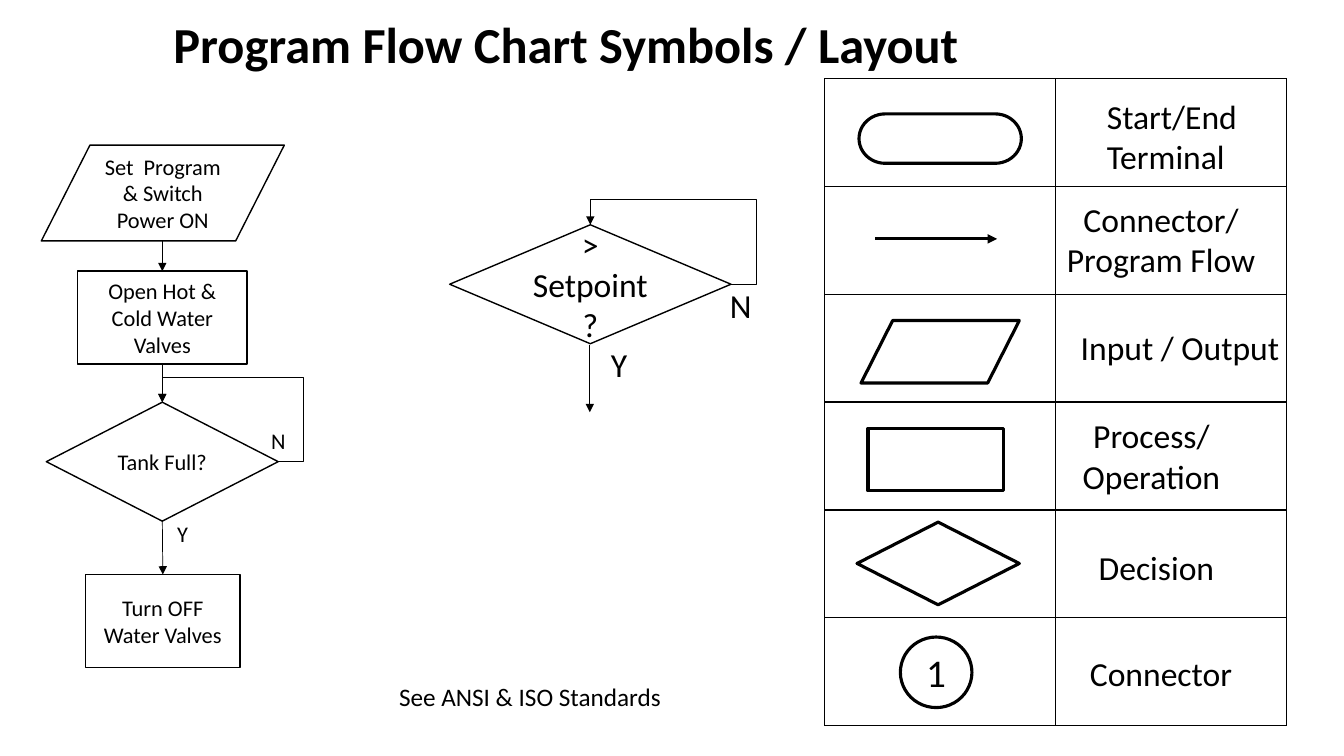
import pptx
import pptx.dml.color
import pptx.enum.shapes
import pptx.enum.text
import pptx.oxml
import pptx.oxml.ns
import pptx.util

PX = 9144
INK = "000000"
KIND = pptx.enum.shapes.MSO_SHAPE
LINK = pptx.enum.shapes.MSO_CONNECTOR
ALIGN = pptx.enum.text.PP_ALIGN
ANCHOR = pptx.enum.text.MSO_ANCHOR
FIT = pptx.enum.text.MSO_AUTO_SIZE
BOTTOM, TOP, RIGHT = 2, 0, 3
ROW, COL, REACH = 107, 229, 25


def emu(*nums):
    return [pptx.util.Emu(round(n * PX)) for n in nums]


def tint(code):
    return pptx.dml.color.RGBColor.from_string(code)


def put(item, **vals):
    for name, val in vals.items():
        setattr(item, name, val)


def add_xml(host, tag, inner="", **attrs):
    pairs = "".join(f' {name}="{val}"' for name, val in attrs.items())
    space = pptx.oxml.ns.nsdecls("a")
    node = pptx.oxml.parse_xml(f"<a:{tag} {space}{pairs}>{inner}</a:{tag}>")
    host.append(node)


def write(frame, text, size, align, bold=False):
    frame.text = text
    for para in frame.paragraphs:
        para.alignment = align
        put(para.font, name="Calibri", size=pptx.util.Pt(size), bold=bold)
        para.font.color.rgb = tint(INK)


def draw_line(item, width):
    item.line.color.rgb = tint(INK)
    item.line.width = pptx.util.Pt(width)


def add_title(slide, text, box):
    title = slide.shapes.title
    put(title, **dict(zip(("left", "top", "width", "height"), emu(*box))))
    title.text_frame.vertical_anchor = ANCHOR.MIDDLE
    write(title.text_frame, text, 36, ALIGN.LEFT, True)
    title.text_frame.paragraphs[0].line_spacing = 0.9


def add_node(slide, kind, box, text="", size=16, width=1, fill="FFFFFF"):
    node = slide.shapes.add_shape(kind, *emu(*box))
    node.shadow.inherit = False
    if fill:
        node.fill.solid()
        node.fill.fore_color.rgb = tint(fill)
    else:
        node.fill.background()
    draw_line(node, width)
    if text:
        node.text_frame.vertical_anchor = ANCHOR.MIDDLE
        write(node.text_frame, text, size, ALIGN.CENTER)
    return node


def add_label(slide, text, box, size=24, align=ALIGN.LEFT, wrap=False):
    frame = slide.shapes.add_textbox(*emu(*box)).text_frame
    put(frame, word_wrap=wrap, auto_size=FIT.SHAPE_TO_FIT_TEXT)
    write(frame, text, size, align)


def finish(link, width):
    draw_line(link, width)
    add_xml(link.line._get_or_add_ln(), "tailEnd", type="triangle")
    add_xml(link._element.spPr, "effectLst")


def add_arrow(slide, start, end, width=0.5):
    link = slide.shapes.add_connector(LINK.STRAIGHT, *emu(*start, *end))
    finish(link, width)


def join(slide, first, last):
    link = slide.shapes.add_connector(LINK.STRAIGHT, 0, 0, 0, 0)
    link.begin_connect(first, BOTTOM)
    link.end_connect(last, TOP)
    finish(link, 0.5)


def add_loop(slide, gate):
    right, top = gate.left + gate.width, gate.top
    mid_x, mid_y = gate.left + gate.width // 2, top + gate.height // 2
    link = slide.shapes.add_connector(LINK.ELBOW, right, mid_y, mid_x, top)
    link.begin_connect(gate, RIGHT)
    link.end_connect(gate, TOP)
    geom = link._element.spPr.find(pptx.oxml.ns.qn("a:prstGeom"))
    geom.set("prst", "bentConnector4")
    guides = geom.find(pptx.oxml.ns.qn("a:avLst"))
    out = REACH * PX
    bends = {"adj1": -out / link.width, "adj2": 1 + out / link.height}
    for name, bend in bends.items():
        add_xml(guides, "gd", name=name, fmla=f"val {round(bend * 100000)}")
    finish(link, 0.5)


def add_grid(slide, left, top, rows, cols):
    box = emu(left, top, cols * COL, rows * ROW)
    table = slide.shapes.add_table(rows, cols, *box).table
    put(table, first_row=False, horz_banding=False)
    ink = f'<a:solidFill><a:srgbClr val="{INK}"/></a:solidFill>'
    for cell in table.iter_cells():
        edges = cell._tc.get_or_add_tcPr()
        for side in "LRTB":
            add_xml(edges, f"ln{side}", ink, w=12700)
        cell.fill.background()


def add_legend(slide):
    add_grid(slide, 818, 78, 6, 2)
    for kind, box, text in (
        (KIND.FLOWCHART_TERMINATOR, (852, 113, 161, 49), ""),
        (KIND.FLOWCHART_DATA, (854, 318, 157, 62), ""),
        (KIND.FLOWCHART_PROCESS, (861, 425, 134, 62), ""),
        (KIND.FLOWCHART_DECISION, (850, 518, 161, 82), ""),
        (KIND.FLOWCHART_CONNECTOR, (893, 632, 71, 70), "1"),
    ):
        add_node(slide, kind, box, text, 28, 2.25, None)
    add_arrow(slide, (868, 237), (989, 237), 2.25)
    for text, box, align in (
        ("Start/End\nTerminal", (1088, 90, 150, 91), ALIGN.LEFT),
        ("Connector/\nProgram Flow", (1047, 192, 209, 91), ALIGN.CENTER),
        ("Input / Output", (1062, 319, 219, 50), ALIGN.LEFT),
        ("Process/\nOperation", (1063, 407, 158, 91), ALIGN.CENTER),
        ("Decision", (1079, 538, 136, 50), ALIGN.CENTER),
        ("Connector", (1070, 643, 163, 50), ALIGN.CENTER),
    ):
        add_label(slide, text, box, align=align)


def add_sample(slide):
    gate = add_node(slide, KIND.FLOWCHART_DECISION, (446, 223, 279, 118),
                    "> Setpoint ?", 24)
    add_loop(slide, gate)
    add_label(slide, "Y", (596, 336, 37, 50))
    add_label(slide, "N", (714, 278, 42, 50))
    add_arrow(slide, (585, 342), (585, 409))


def add_flow(slide):
    add_node(slide, KIND.FLOWCHART_DATA, (41, 144, 241, 95),
             "Set  Program & Switch Power ON")
    valves = add_node(slide, KIND.FLOWCHART_PROCESS, (77, 269, 168, 92),
                      "Open Hot & Cold Water Valves")
    tank = add_node(slide, KIND.FLOWCHART_DECISION, (46, 399, 230, 118),
                    "Tank Full?")
    close = add_node(slide, KIND.FLOWCHART_PROCESS, (85, 570, 153, 92),
                     "Turn OFF Water Valves")
    add_arrow(slide, (161, 239), (161, 269))
    join(slide, valves, tank)
    join(slide, tank, close)
    add_loop(slide, tank)
    add_label(slide, "N", (259, 419, 29, 37), 16, wrap=True)
    add_label(slide, "Y", (166, 511, 26, 37), 16, wrap=True)


def main():
    deck = pptx.Presentation()
    wide, high = emu(1333, 750)
    put(deck, slide_width=wide, slide_height=high)
    slide = deck.slides.add_slide(deck.slide_layouts[5])
    add_title(slide, "Program Flow Chart Symbols / Layout", (162, -5, 881, 103))
    add_legend(slide)
    add_label(slide, "See ANSI & ISO Standards", (386, 671, 283, 40), 18)
    add_sample(slide)
    add_flow(slide)
    deck.save("out.pptx")


if __name__ == "__main__":
    main()
